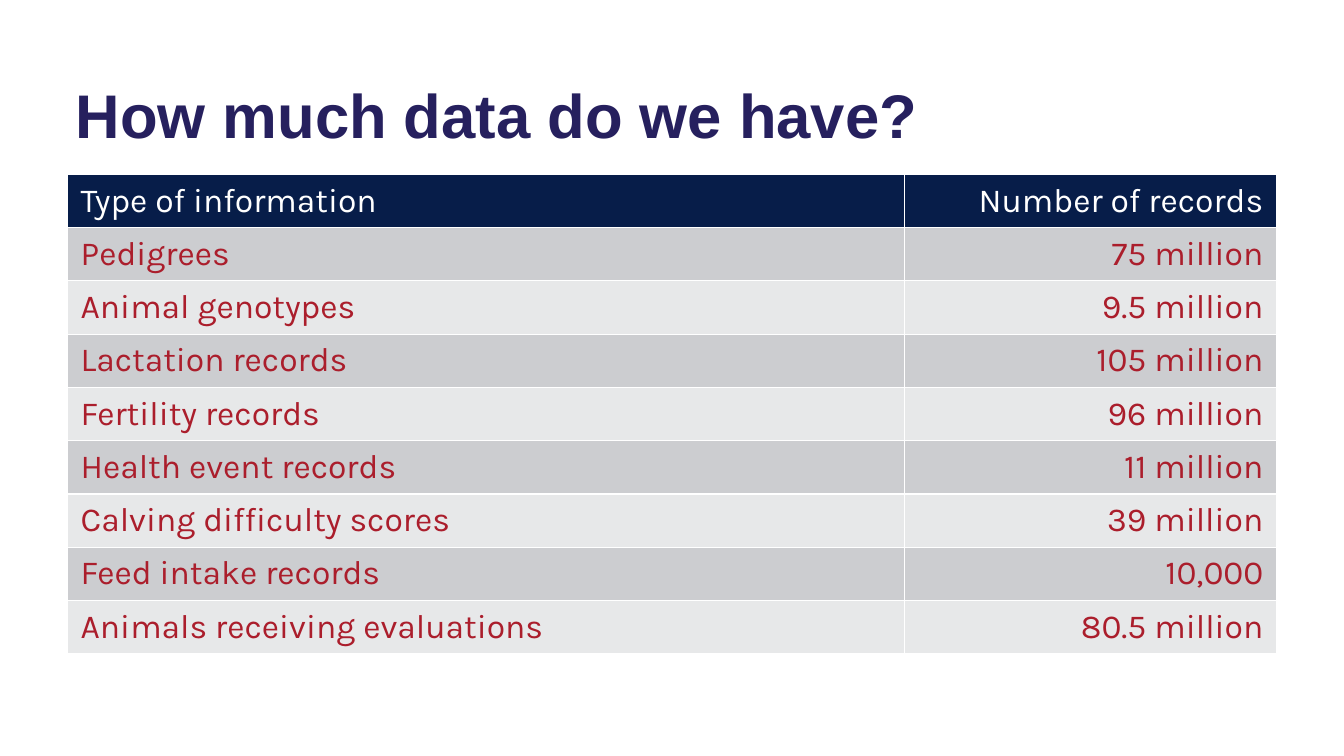
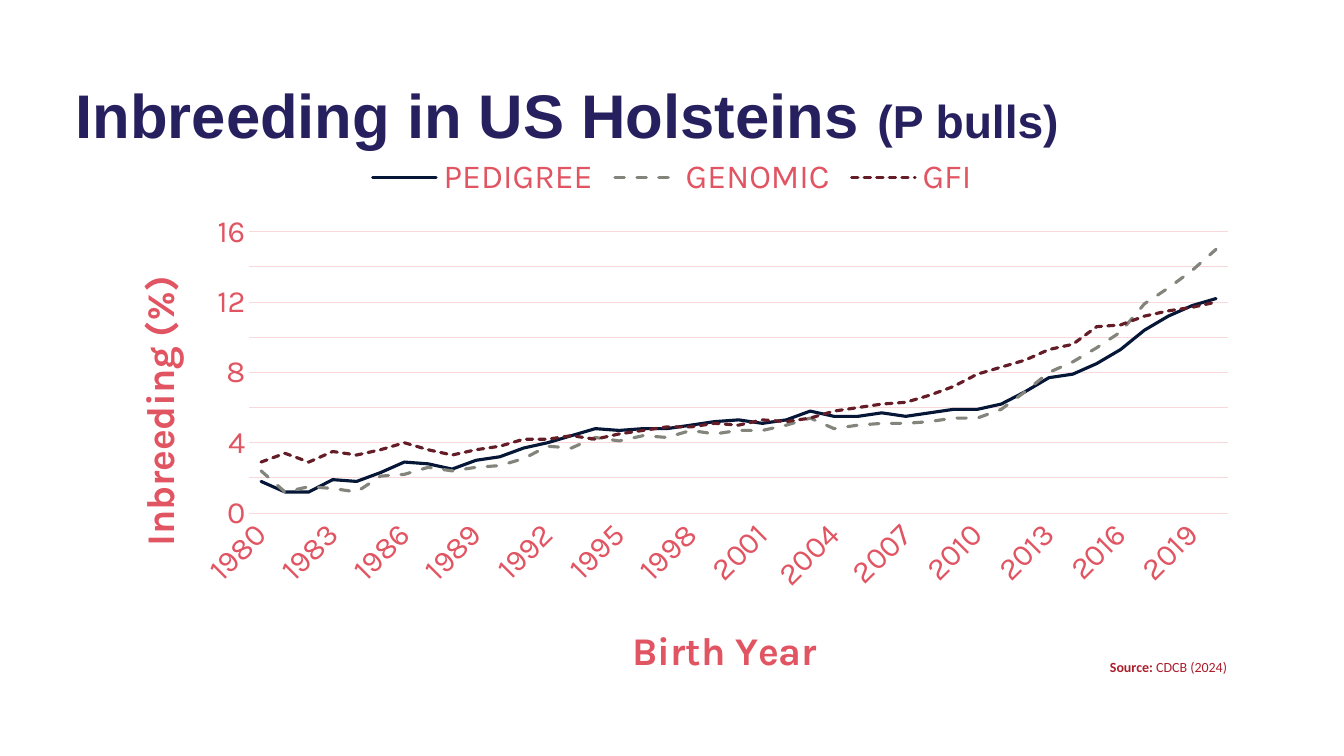
from copy import deepcopy
from lxml.etree import SubElement, fromstring
from pptx import Presentation
from pptx.chart.data import CategoryChartData
from pptx.dml.color import RGBColor
from pptx.enum.chart import XL_CHART_TYPE as ChartType, XL_LEGEND_POSITION as LegendPosition
from pptx.enum.chart import XL_TICK_MARK as TickMark
from pptx.enum.dml import MSO_LINE_DASH_STYLE as Dash
from pptx.enum.text import MSO_ANCHOR as Anchor, MSO_AUTO_SIZE as AutoSize, PP_ALIGN as Align
from pptx.oxml.ns import nsdecls, qn
from pptx.util import Inches, Pt

WHITE, NAVY, INDIGO = "FFFFFF", "071D49", "26205E"
RED, CORAL, PINK = "AB1E2C", "E15462", "F8D8DB"
BANDS = ("E7E8E9", "CCCDD0")

TITLE_FONT = {"name": "Arial", "size": Pt(44), "bold": True}
TABLE_FONT = {"name": "Karla", "size": Pt(24), "bold": False}
CHART_FONT = {"name": "Karla", "size": Pt(10)}
TICK_FONT = {"name": "Karla", "size": Pt(22), "bold": False}
AXIS_FONT = {"name": "Karla", "size": Pt(28), "bold": True}
LEGEND_FONT = {"name": "Karla", "size": Pt(24)}
SOURCE_FONT = {"name": "Calibri", "size": Pt(10)}

RECORDS = [
    ("Type of information", "Number of records"),
    ("Pedigrees", "75 million"),
    ("Animal genotypes", "9.5 million"),
    ("Lactation records", "105 million"),
    ("Fertility records", "96 million"),
    ("Health event records", "11 million"),
    ("Calving difficulty scores", "39 million"),
    ("Feed intake records", "10,000"),
    ("Animals receiving evaluations", "80.5 million"),
]

INBREEDING = [
    ("PEDIGREE", "051637", Dash.SOLID,
     [1.8, 1.2, 1.2, 1.9, 1.8, 2.3, 2.9, 2.8, 2.5, 3, 3.2, 3.7, 4, 4.4, 4.8, 4.7, 4.8, 4.8, 5,
      5.2, 5.3, 5.1, 5.3, 5.8, 5.5, 5.5, 5.7, 5.5, 5.7, 5.9, 5.9, 6.2, 6.9, 7.7, 7.9, 8.5, 9.3,
      10.4, 11.2, 11.8, 12.2]),
    ("GENOMIC", "83857C", Dash.DASH,
     [2.4, 1.2, 1.5, 1.4, 1.2, 2.1, 2.2, 2.6, 2.4, 2.6, 2.7, 3.1, 3.8, 3.7, 4.3, 4.1, 4.4, 4.3,
      4.7, 4.5, 4.7, 4.7, 5, 5.4, 4.8, 5, 5.1, 5.1, 5.2, 5.4, 5.4, 5.9, 6.9, 8, 8.6, 9.4, 10.3,
      11.9, 12.8, 13.8, 15]),
    ("GFI", "641C26", Dash.SQUARE_DOT,
     [2.9, 3.4, 2.9, 3.5, 3.3, 3.6, 4, 3.6, 3.3, 3.6, 3.8, 4.2, 4.2, 4.4, 4.2, 4.5, 4.7, 4.9, 4.9,
      5.1, 5, 5.3, 5.2, 5.4, 5.8, 6, 6.2, 6.3, 6.7, 7.2, 7.9, 8.3, 8.7, 9.3, 9.6, 10.6, 10.7,
      11.2, 11.5, 11.7, 12]),
]


def rgb(hex_text):
    """Turn a hex string into a colour."""
    return RGBColor.from_string(hex_text)


def set_all(target, values):
    """Set each attribute in values on the target."""
    for name, value in values.items():
        setattr(target, name, value)


def style_font(font, values, color):
    """Apply font values and a colour."""
    set_all(font, values)
    font.color.rgb = rgb(color)


def add_run(paragraph, text, values, color):
    """Append a styled run to a paragraph."""
    run = paragraph.add_run()
    run.text = text
    style_font(run.font, values, color)


def style_line(line, color, width):
    """Give a line its colour and width in points."""
    line.color.rgb = rgb(color)
    line.width = Pt(width)


def add_titled_slide(deck, heading, detail=""):
    """Add a slide with its heading and an optional smaller detail."""
    slide = deck.slides.add_slide(deck.slide_layouts[5])
    title = slide.shapes.title
    set_all(title, {"left": Inches(0.65), "top": Inches(0.32),
                    "width": Inches(12), "height": Inches(1.71)})
    set_all(title.text_frame, {"vertical_anchor": Anchor.MIDDLE, "word_wrap": True,
                               "auto_size": AutoSize.NONE})
    paragraph = title.text_frame.paragraphs[0]
    set_all(paragraph, {"alignment": Align.LEFT, "line_spacing": 0.9})
    add_run(paragraph, heading, TITLE_FONT, INDIGO)
    if detail:
        add_run(paragraph, detail, {**TITLE_FONT, "size": Pt(33)}, INDIGO)
    return slide


def border_cell(cell):
    """Draw thin white borders on all sides of a cell."""
    properties = cell._tc.get_or_add_tcPr()
    for index, side in enumerate(("lnL", "lnR", "lnT", "lnB")):
        border = fromstring(
            f'<a:{side} {nsdecls("a")} w="12700"><a:solidFill>'
            f'<a:srgbClr val="{WHITE}"/></a:solidFill></a:{side}>')
        properties.insert(index, border)


def fill_cell(cell, text, fill, color, alignment):
    """Write and format one table cell."""
    set_all(cell, {"margin_left": Inches(0.13), "margin_right": Inches(0.13),
                   "margin_top": Inches(0.07), "margin_bottom": Inches(0.07)})
    cell.fill.solid()
    cell.fill.fore_color.rgb = rgb(fill)
    border_cell(cell)
    paragraph = cell.text_frame.paragraphs[0]
    paragraph.alignment = alignment
    add_run(paragraph, text, TABLE_FONT, color)


def add_records_table(slide):
    """Add the banded table of record counts."""
    table = slide.shapes.add_table(len(RECORDS), 2, Inches(0.67), Inches(1.73),
                                   Inches(11.99), Inches(0.52 * len(RECORDS))).table
    for column, width in zip(table.columns, (8.3, 3.69)):
        column.width = Inches(width)
    for row, record in enumerate(RECORDS):
        fill, color = (BANDS[row % 2], RED) if row else (NAVY, WHITE)
        for column, alignment in enumerate((Align.LEFT, Align.RIGHT)):
            fill_cell(table.cell(row, column), record[column], fill, color, alignment)


def place(element, **fractions):
    """Fix a chart part at fractions of the chart area."""
    layout = element.find(qn("c:layout"))
    if layout is None:
        layout = element.makeelement(qn("c:layout"))
        element.insert(0, layout)
    manual = SubElement(layout, qn("c:manualLayout"))
    if "w" in fractions:
        SubElement(manual, qn("c:layoutTarget")).set("val", "inner")
    for name in ("x", "y"):
        SubElement(manual, qn(f"c:{name}Mode")).set("val", "edge")
    for name, value in fractions.items():
        SubElement(manual, qn(f"c:{name}")).set("val", str(value))


def style_axis(axis, caption, rotation, x, y):
    """Format an axis and place its title."""
    set_all(axis, {"major_tick_mark": TickMark.NONE, "minor_tick_mark": TickMark.NONE})
    style_font(axis.tick_labels.font, TICK_FONT, CORAL)
    frame = axis.axis_title.text_frame
    add_run(frame.paragraphs[0], caption, AXIS_FONT, CORAL)
    frame._txBody.find(qn("a:bodyPr")).set("rot", str(rotation * 60000))
    place(axis.axis_title._element, x=x, y=y)


def style_category_axis(axis):
    """Format the birth years, labelling every third one."""
    style_axis(axis, "Birth Year", 0, 0.46, 0.87)
    style_line(axis.format.line, PINK, 0.75)
    axis._element.find(qn("c:txPr")).find(qn("a:bodyPr")).set("rot", str(-45 * 60000))
    skip = axis._element.makeelement(qn("c:tickLblSkip"), {"val": "3"})
    axis._element.find(qn("c:noMultiLvlLbl")).addprevious(skip)


def style_value_axis(axis):
    """Format the percentages and their gridlines."""
    style_axis(axis, "Inbreeding (%)", -90, 0.03, 0.23)
    set_all(axis, {"minimum_scale": 0, "maximum_scale": 16, "major_unit": 4, "minor_unit": 2,
                   "has_major_gridlines": True, "has_minor_gridlines": True})
    axis.format.line.fill.background()
    style_line(axis.major_gridlines.format.line, PINK, 0.75)
    major, minor = (axis._element.find(qn(f"c:{kind}Gridlines")) for kind in ("major", "minor"))
    minor.append(deepcopy(major.find(qn("c:spPr"))))


def add_inbreeding_chart(slide):
    """Add the line chart of inbreeding by birth year."""
    data = CategoryChartData(number_format="General")
    data.categories = [str(year) for year in range(1980, 2021)]
    for name, _, _, values in INBREEDING:
        data.add_series(name, values)
    chart = slide.shapes.add_chart(ChartType.LINE, Inches(0.92), Inches(1.43),
                                   Inches(11.49), Inches(5.4), data).chart
    set_all(chart, {"has_title": False, "has_legend": True})
    style_font(chart.font, CHART_FONT, RED)
    set_all(chart.legend, {"position": LegendPosition.TOP, "include_in_layout": False})
    style_font(chart.legend.font, LEGEND_FONT, CORAL)
    style_category_axis(chart.category_axis)
    style_value_axis(chart.value_axis)
    place(chart._chartSpace.chart.plotArea, x=0.135, y=0.161, w=0.845, h=0.517)
    plot = chart.plots[0]
    plot.vary_by_categories = False
    for series, (_, color, dash, _) in zip(plot.series, INBREEDING):
        series.smooth = False
        style_line(series.format.line, color, 2.25)
        series.format.line.dash_style = dash
        series._element.find(".//" + qn("a:ln")).set("cap", "rnd")


def add_source(slide, text):
    """Add the source note under the chart."""
    note = slide.shapes.add_textbox(Inches(10.91), Inches(6.48), Inches(1.51), Inches(0.27))
    note.text_frame.word_wrap = True
    paragraph = note.text_frame.paragraphs[0]
    add_run(paragraph, "Source:", {**SOURCE_FONT, "bold": True}, RED)
    add_run(paragraph, f" {text}", SOURCE_FONT, RED)


def main():
    """Build and save the slides."""
    deck = Presentation()
    set_all(deck, {"slide_width": Inches(13.33), "slide_height": Inches(7.5)})
    add_records_table(add_titled_slide(deck, "How much data do we have?"))
    inbreeding = add_titled_slide(deck, "Inbreeding in US Holsteins ", "(P bulls)")
    add_inbreeding_chart(inbreeding)
    add_source(inbreeding, "CDCB (2024)")
    deck.save("out.pptx")


if __name__ == "__main__":
    main()
